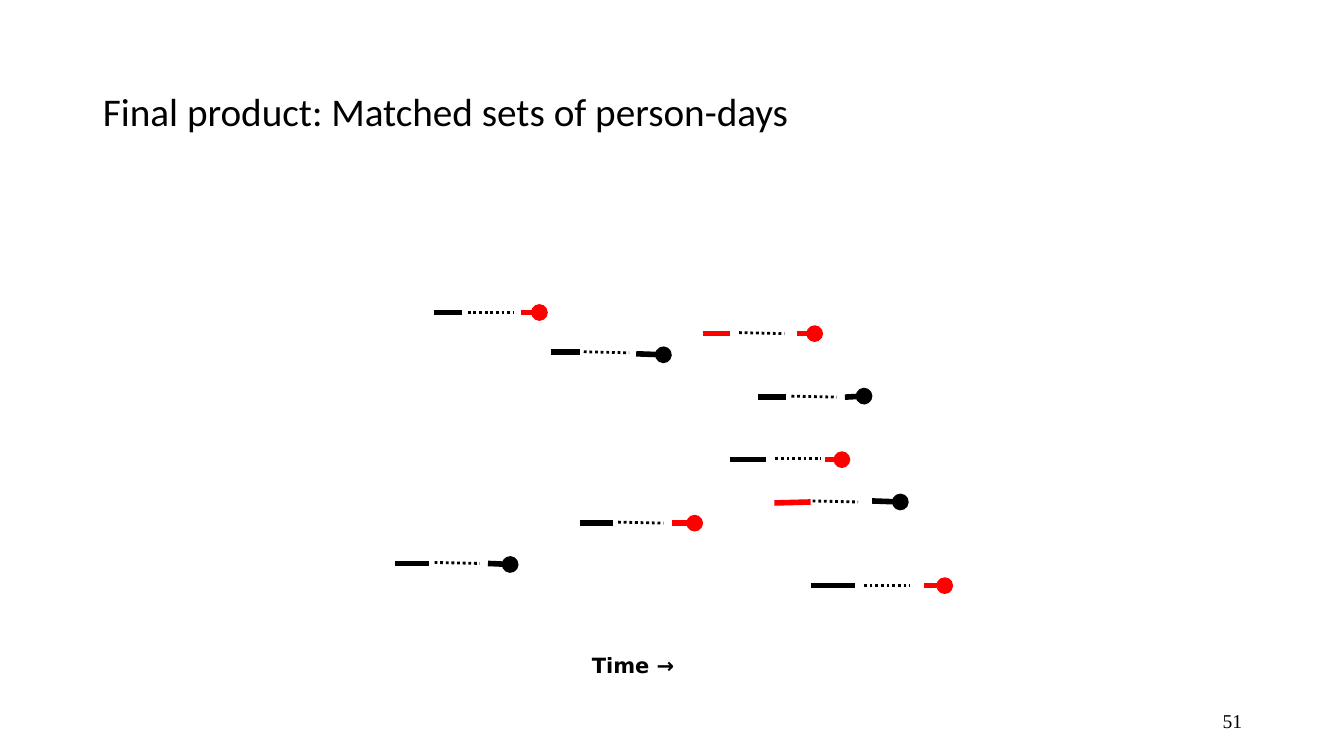
import pptx
import pptx.util
import pptx.dml.color
import pptx.enum.dml
import pptx.enum.shapes
import pptx.enum.text
import pptx.oxml
import pptx.oxml.ns

INK = {"black": "000000", "red": "FF0000"}
ALIGN = pptx.enum.text.PP_ALIGN
ANCHOR = pptx.enum.text.MSO_ANCHOR
FIT = pptx.enum.text.MSO_AUTO_SIZE
DOT = pptx.enum.dml.MSO_LINE.ROUND_DOT
GAP = 45

ROWS = [
    ((430, 310, 458, 310, "black"), (464, 310, 0), (517, 310, 535, 310, "red")),
    ((697, 331, 724, 331, "red"), (733, 330, 1), (790, 331, 808, 331, "red")),
    ((547, 349, 575, 349, "black"), (579, 349, 1), (631, 351, 658, 352, "black")),
    ((752, 394, 780, 394, "black"), (785, 393, 1), (838, 394, 857, 393, "black")),
    ((724, 456, 760, 456, "black"), (769, 455, 0), (818, 456, 835, 456, "red")),
    ((768, 499, 804, 498, "red"), (806, 497, 1), (865, 497, 893, 498, "black")),
    ((575, 519, 608, 519, "black"), (613, 518, 1), (667, 519, 689, 519, "red")),
    ((392, 559, 425, 559, "black"), (431, 558, 1), (484, 559, 506, 560, "black")),
    ((804, 581, 848, 581, "black"), (857, 581, 0), (916, 581, 937, 581, "red")),
]


def px(n):
    return pptx.util.Emu(n * 9144)


def tint(name):
    return pptx.dml.color.RGBColor.from_string(INK[name])


class Deck:
    def __init__(self, wide, high):
        self.file = pptx.Presentation()
        self.file.slide_width = px(wide)
        self.file.slide_height = px(high)
        self.slide = self.file.slides.add_slide(self.file.slide_layouts[5])

    def fill(self, shape, text, font, size, align, anchor, bold=False):
        frame = shape.text_frame
        frame.vertical_anchor = anchor
        para = frame.paragraphs[0]
        para.alignment = align
        run = para.add_run()
        run.text = text
        run.font.name = font
        run.font.size = pptx.util.Pt(size)
        run.font.bold = bold
        run.font.color.rgb = tint("black")
        return para

    def title(self, box, text):
        shape = self.slide.shapes.title
        shape.left, shape.top, shape.width, shape.height = map(px, box)
        para = self.fill(shape, text, "Calibri", 28, ALIGN.LEFT, ANCHOR.MIDDLE)
        para.line_spacing = 0.9

    def label(self, box, text, font, size, align, anchor, bold=False, wrap=True):
        shape = self.slide.shapes.add_textbox(*map(px, box))
        shape.text_frame.word_wrap = wrap
        shape.text_frame.auto_size = FIT.NONE if wrap else FIT.SHAPE_TO_FIT_TEXT
        self.fill(shape, text, font, size, align, anchor, bold)

    def line(self, x1, y1, x2, y2, ink, width=4, dash=None, ball=False):
        kind = pptx.enum.shapes.MSO_CONNECTOR.STRAIGHT
        link = self.slide.shapes.add_connector(kind, px(x1), px(y1), px(x2), px(y2))
        link.line.color.rgb = tint(ink)
        link.line.width = pptx.util.Pt(width)
        if dash:
            link.line.dash_style = dash
        props = link._element.spPr
        if ball:
            tail = pptx.oxml.parse_xml(
                f'<a:tailEnd {pptx.oxml.ns.nsdecls("a")} type="oval"/>')
            props.find(pptx.oxml.ns.qn("a:ln")).append(tail)
        props.append(pptx.oxml.parse_xml(
            f'<a:effectLst {pptx.oxml.ns.nsdecls("a")}/>'))

    def track(self, first, dots, last):
        x, y, drop = dots
        self.line(*first)
        self.line(x, y, x + GAP, y + drop, "black", width=2, dash=DOT)
        self.line(*last, ball=True)


def main():
    deck = Deck(1333, 750)
    deck.title((92, 40, 1150, 145), "Final product: Matched sets of person-days")
    for row in ROWS:
        deck.track(*row)
    deck.label((575, 642, 106, 35), "Time →", "DejaVu Sans", 15,
               ALIGN.CENTER, ANCHOR.TOP, bold=True, wrap=False)
    deck.label((942, 695, 300, 40), "51", "Times New Roman", 14,
               ALIGN.RIGHT, ANCHOR.MIDDLE)
    deck.file.save("out.pptx")


if __name__ == "__main__":
    main()
